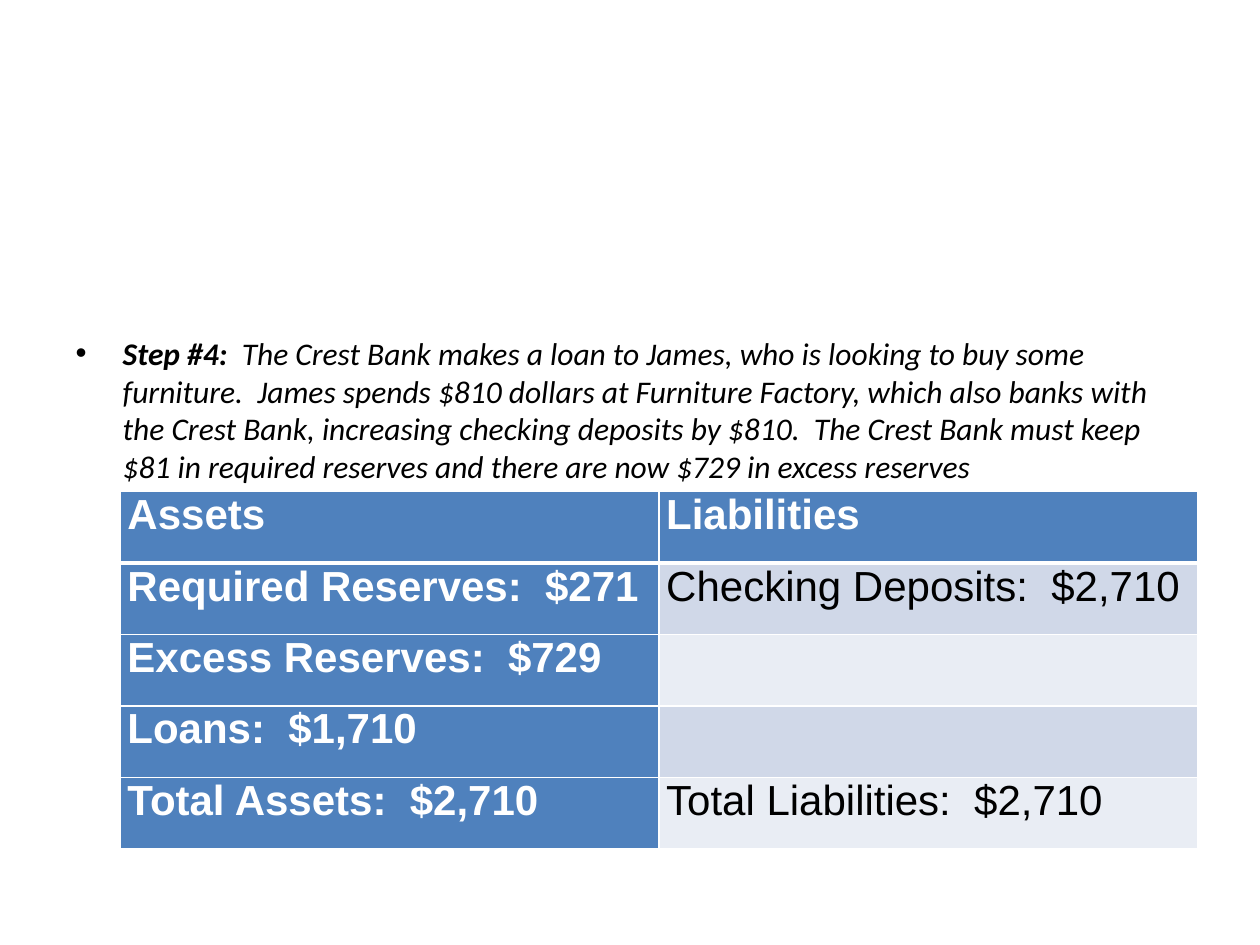
"""Builds the bank balance sheet slide for step 4 of the loan example."""
import lxml.etree
import pptx
import pptx.dml.color
import pptx.enum.text
import pptx.oxml.ns
import pptx.util

Cm = pptx.util.Cm
Pt = pptx.util.Pt
qn = pptx.oxml.ns.qn

theme = {
    "head": "4F81BD", "bands": ("D0D8E8", "E9EDF4"),
    "light": "FFFFFF", "dark": "000000",
    "body": ("Calibri", 18), "cell": ("Arial", 24),
    "thin": 1, "thick": 3,
}
rows = [
    ("Assets", "Liabilities"),
    ("Required Reserves:  $271", "Checking Deposits:  $2,710"),
    ("Excess Reserves:  $729", ""),
    ("Loans:  $1,710", ""),
    ("Total Assets:  $2,710", "Total Liabilities:  $2,710"),
]
story = (
    "The Crest Bank makes a loan to James, who is looking to buy some furniture.  "
    "James spends $810 dollars at Furniture Factory, which also banks with the "
    "Crest Bank, increasing checking deposits by $810.  The Crest Bank must keep "
    "$81 in required reserves and there are now $729 in excess reserves"
)


def style(font, face, tint):
    font.name, font.size = face[0], Pt(face[1])
    font.color.rgb = pptx.dml.color.RGBColor.from_string(tint)


def edge(cell, side, width):
    line = lxml.etree.SubElement(
        cell._tc.get_or_add_tcPr(), qn("a:ln" + side), w=str(Pt(width)))
    fill = lxml.etree.SubElement(line, qn("a:solidFill"))
    lxml.etree.SubElement(fill, qn("a:srgbClr"), val=theme["light"])


deck = pptx.Presentation()
deck.slide_width, deck.slide_height = Cm(25.4), Cm(19.05)
slide = deck.slides.add_slide(deck.slide_layouts[1])
title = slide.shapes.title._element
title.getparent().remove(title)

body = slide.placeholders[1]
body.left, body.top, body.width, body.height = Cm(1.27), Cm(6.6), Cm(22.86), Cm(10.49)
frame = body.text_frame
frame.auto_size = pptx.enum.text.MSO_AUTO_SIZE.NONE
para = frame.paragraphs[0]
props = para._p.get_or_add_pPr()
props.set("marL", str(Cm(0.95)))
props.set("indent", str(-Cm(0.95)))
lxml.etree.SubElement(props, qn("a:buFont"), typeface="Arial")
lxml.etree.SubElement(props, qn("a:buChar"), char="•")
para.space_before, para.space_after = Pt(0), Pt(18)
style(para.font, theme["body"], theme["dark"])
for text, bold in (("Step #4:  ", True), (story, False)):
    run = para.add_run()
    run.text = text
    style(run.font, theme["body"], theme["dark"])
    run.font.bold, run.font.italic = bold, True

table = slide.shapes.add_table(
    len(rows), 2, Cm(2.42), Cm(9.91), Cm(21.72), Cm(7.2)).table
for r, texts in enumerate(rows):
    table.rows[r].height = Cm(1.44)
    for c, text in enumerate(texts):
        cell = table.cell(r, c)
        strong = r == 0 or c == 0
        cell.margin_left = cell.margin_right = Cm(0.15)
        cell.margin_top = cell.margin_bottom = Cm(0)
        for side in "LRTB":
            rule = (r, side) in ((0, "B"), (1, "T"))
            edge(cell, side, theme["thick" if rule else "thin"])
        cell.fill.solid()
        shade = theme["head"] if strong else theme["bands"][(r - 1) % 2]
        cell.fill.fore_color.rgb = pptx.dml.color.RGBColor.from_string(shade)
        cell.text = text
        font = cell.text_frame.paragraphs[0].font
        style(font, theme["cell"], theme["light" if strong else "dark"])
        font.bold = strong

deck.save("out.pptx")
